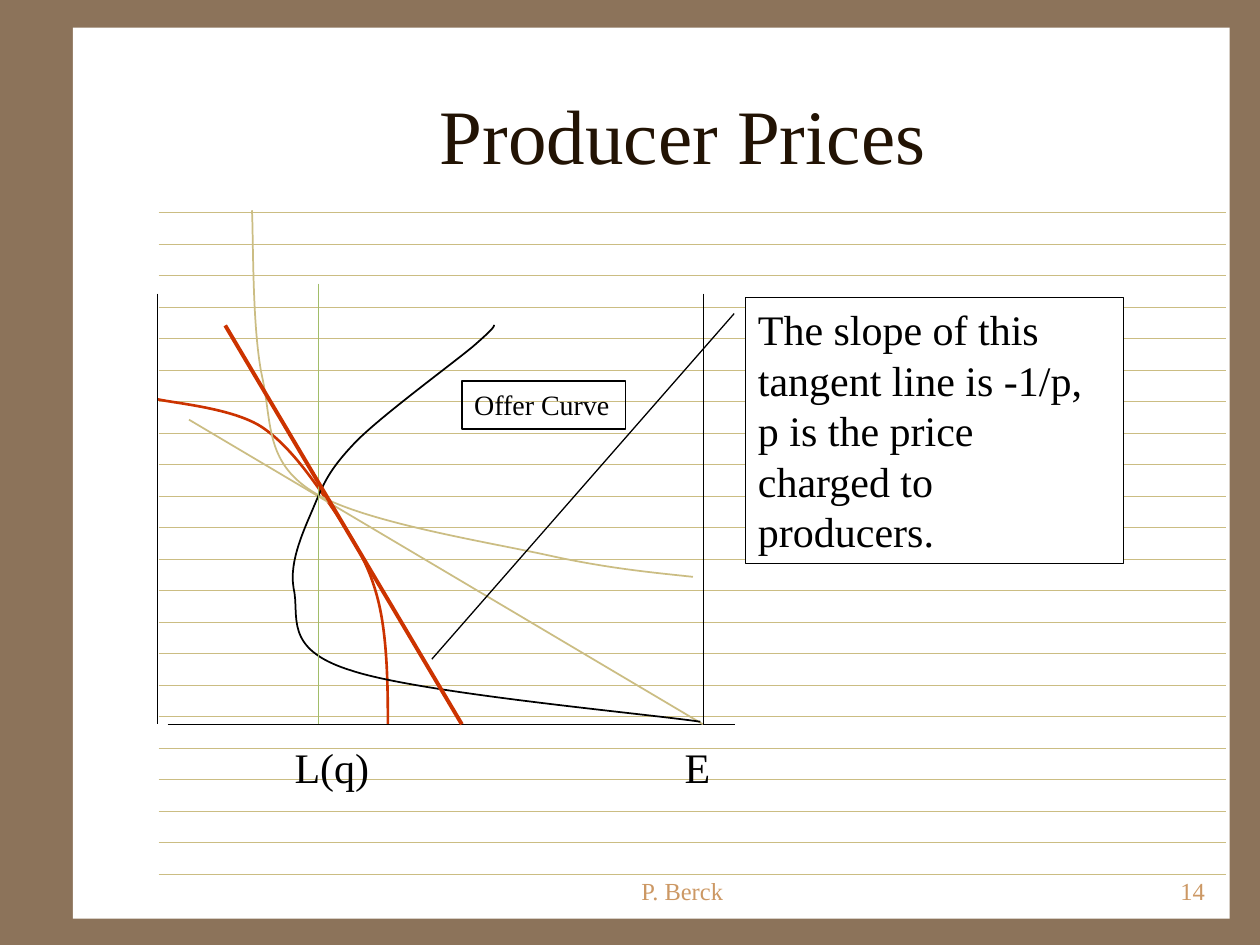
import pptx
import pptx.dml.color
import pptx.enum.shapes
import pptx.enum.text
import pptx.oxml.ns
import pptx.util
from lxml import etree

Cm = pptx.util.Cm
Pt = pptx.util.Pt
qn = pptx.oxml.ns.qn
RGB = pptx.dml.color.RGBColor
SHAPE = pptx.enum.shapes.MSO_SHAPE
ALIGN = pptx.enum.text.PP_ALIGN
ANCHOR = pptx.enum.text.MSO_ANCHOR

BROWN = RGB(0x8C, 0x73, 0x5A)
WHITE = RGB(0xFF, 0xFF, 0xFF)
BLACK = RGB(0x00, 0x00, 0x00)
SAND = RGB(0xCB, 0xBD, 0x83)
RED = RGB(0xCC, 0x33, 0x00)
GREEN = RGB(0xA1, 0xBD, 0x69)
TAN = RGB(0xCC, 0x98, 0x64)
DARK = RGB(0x22, 0x13, 0x04)
FONT = "Times New Roman"

# Ruled lines, in cm
RULES = 22
TOP = 4.29
GAP = 2.54 / 4

# Graph frame, in cm
BASE = 14.6
LEFT = 3.18
RIGHT = 14.17

# Curves: a start point, then three Bezier points for each piece
FRONTIER = [
    (7.82, BASE),
    (7.82, 13.72), (7.8, 12.8), (7.62, 12.09),
    (7.44, 11.38), (7.16, 10.95), (6.78, 10.36),
    (6.38, 9.78), (5.89, 9.02), (5.28, 8.61),
    (4.7, 8.23), (3.53, 8.13), (LEFT, 8.05),
]
TASTE = [
    (5.08, 4.24),
    (5.11, 4.78), (5.08, 6.6), (5.28, 7.57),
    (5.49, 8.51), (5.33, 9.3), (6.3, 9.91),
    (7.26, 10.52), (9.8, 10.92), (11.07, 11.2),
    (12.34, 11.48), (13.36, 11.56), (13.97, 11.63),
]
OFFER = [
    (14.12, 14.55),
    (12.95, 14.38), (8.41, 13.97), (7.06, 13.51),
    (5.69, 13.08), (6.05, 12.42), (5.92, 11.86),
    (5.82, 11.3), (6.15, 10.64), (6.35, 10.16),
    (6.55, 9.68), (6.68, 9.42), (7.19, 8.89),
    (7.72, 8.36), (9.07, 7.37), (9.53, 6.99),
    (9.98, 6.6), (9.96, 6.58), (9.96, 6.55),
]


def apply(thing, **values):
    for name, value in values.items():
        setattr(thing, name, value)


def place(shape, x, y, w, h):
    apply(shape, left=Cm(x), top=Cm(y), width=Cm(w), height=Cm(h))


def write(shape, text, size, color=BLACK, align=ALIGN.LEFT,
          anchor=ANCHOR.TOP, wrap=True):
    frame = shape.text_frame
    apply(frame, word_wrap=wrap, vertical_anchor=anchor)
    para = frame.paragraphs[0]
    para.alignment = align
    run = para.add_run()
    run.text = text
    apply(run.font, name=FONT, size=Pt(size))
    run.font.color.rgb = color


def paint(shape, fill=None, line=None, width=1):
    shape.shadow.inherit = False
    if fill is None:
        shape.fill.background()
    else:
        shape.fill.solid()
        shape.fill.fore_color.rgb = fill
    if line is None:
        shape.line.fill.background()
    else:
        shape.line.color.rgb = line
        shape.line.width = Pt(width)


def add_box(slide, kind, box, **look):
    shape = slide.shapes.add_shape(kind, *map(Cm, box))
    paint(shape, **look)
    return shape


def add_label(slide, box, text, size, **look):
    write(slide.shapes.add_textbox(*map(Cm, box)), text, size, **look)


def add_line(slide, start, end, color=BLACK, width=0.75):
    line = slide.shapes.add_connector(
        pptx.enum.shapes.MSO_CONNECTOR.STRAIGHT, *map(Cm, start + end))
    line.line.color.rgb = color
    line.line.width = Pt(width)
    props = line.element.find(qn("p:spPr"))
    etree.SubElement(props, qn("a:effectLst"))


def add_curve(slide, points, color, width):
    start, *rest = [(Cm(x), Cm(y)) for x, y in points]
    pen = slide.shapes.build_freeform(*start)
    pen.add_line_segments(rest, close=False)
    shape = pen.convert_to_shape()
    paint(shape, line=color, width=width)
    # Turn each three straight segments into one Bezier piece
    track = next(shape.element.iter(qn("a:path")))
    sides = track.findall(qn("a:lnTo"))
    for i in range(0, len(sides), 3):
        piece = etree.SubElement(track, qn("a:cubicBezTo"))
        for side in sides[i:i + 3]:
            piece.append(side[0])
            track.remove(side)


def add_paper(slide):
    slide.background.fill.solid()
    slide.background.fill.fore_color.rgb = BROWN
    for box in ((1.47, 0.56, 23.32, 17.96), (1.65, 11.48, 2.9, 1.27)):
        add_box(slide, SHAPE.RECTANGLE, box, fill=WHITE)
    for i in range(RULES):
        y = TOP + i * GAP
        add_line(slide, (3.2, y), (24.71, y), SAND)


def add_title(slide, text):
    title = slide.shapes.title
    place(title, 2.97, 1.11, 21.59, 3.18)
    write(title, text, 44, DARK, ALIGN.CENTER, ANCHOR.MIDDLE)
    # Bring the title in front of the paper
    slide.shapes.element.append(title.element)


def add_graph(slide):
    add_curve(slide, FRONTIER, RED, 1.5)
    # Axes and budget line
    add_line(slide, (3.38, BASE), (14.81, BASE))
    add_line(slide, (LEFT, 5.92), (LEFT, BASE))
    add_line(slide, (RIGHT, BASE), (3.81, 8.46), SAND, 1)
    add_curve(slide, TASTE, SAND, 1)
    # Offer curve and its label
    add_curve(slide, OFFER, BLACK, 1)
    label = add_box(slide, SHAPE.RECTANGLE, (9.31, 7.68, 3.3, 0.97),
                    line=BLACK)
    write(label, "Offer Curve", 16, wrap=False)
    add_label(slide, (13.55, 14.82, 1.02, 1.27), "E", 24, wrap=False)
    add_line(slide, (RIGHT + 0.01, 5.92), (RIGHT + 0.01, BASE))
    # Note that points at the tangent
    note = add_box(slide, SHAPE.LINE_CALLOUT_1, (15.03, 6, 7.62, 5.36),
                   fill=WHITE, line=BLACK, width=0.75)
    for i, value in enumerate((0.06, -0.03, 1.36, -0.83)):
        note.adjustments[i] = value
    write(note, "The slope of this tangent line is -1/p, "
          "p is the price charged to producers.", 24)
    add_label(slide, (5.69, 14.82, 2.01, 1.27), "L(q)", 24, wrap=False)
    # Labour level and tangent
    add_line(slide, (6.42, 5.72), (6.42, BASE), GREEN)
    add_line(slide, (4.54, 6.56), (9.31, BASE), RED, 2.25)


def main():
    deck = pptx.Presentation()
    apply(deck, slide_width=Cm(25.4), slide_height=Cm(19.05))
    slide = deck.slides.add_slide(deck.slide_layouts[5])
    add_paper(slide)
    # Footer
    foot = dict(color=TAN, anchor=ANCHOR.BOTTOM)
    add_label(slide, (9.73, 17.1, 8.05, 1.27), "P. Berck", 14,
              align=ALIGN.CENTER, **foot)
    add_label(slide, (19.26, 17.1, 5.28, 1.27), "14", 14,
              align=ALIGN.RIGHT, **foot)
    add_title(slide, "Producer Prices")
    add_graph(slide)
    deck.save("out.pptx")


if __name__ == "__main__":
    main()
